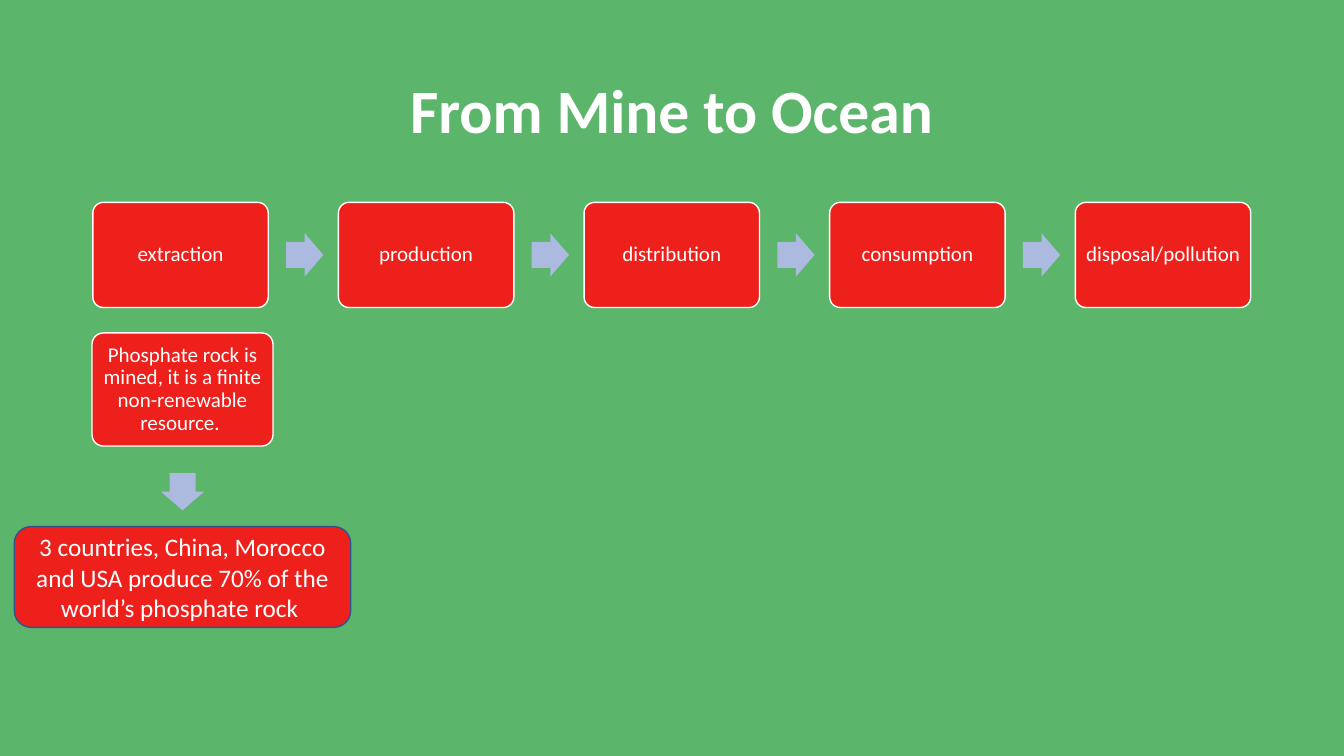
from dataclasses import dataclass

from pptx import Presentation
from pptx.dml.color import RGBColor
from pptx.enum.shapes import MSO_SHAPE
from pptx.enum.text import MSO_ANCHOR, PP_ALIGN
from pptx.util import Cm, Pt

ROUND = MSO_SHAPE.ROUNDED_RECTANGLE
ARROW = MSO_SHAPE.RIGHT_ARROW
MIDDLE = MSO_ANCHOR.MIDDLE
CENTER = PP_ALIGN.CENTER


@dataclass(frozen=True)
class Theme:
    font: str = "Calibri"
    back: str = "5BB56A"
    card: str = "ED201B"
    arrow: str = "ABBADE"
    edge: str = "31538F"
    white: str = "FFFFFF"
    title: int = 44
    step: int = 15
    fact: int = 18


THEME = Theme()
STEPS = ["extraction", "production", "distribution", "consumption",
         "disposal/pollution"]
ROCK = "Phosphate rock is mined, it is a finite non-renewable resource. "
FACT = ("3 countries, China, Morocco and USA produce 70% of the "
        "world’s phosphate rock ")


def color(code):
    return RGBColor.from_string(code)


def write(shape, text, size, pad, space=0.9, bold=False):
    """Put one centred paragraph in the shape; pad is (side, top) in cm."""
    frame = shape.text_frame
    frame.word_wrap = True
    frame.vertical_anchor = MIDDLE
    frame.margin_left = frame.margin_right = Cm(pad[0])
    frame.margin_top = frame.margin_bottom = Cm(pad[1])
    para = frame.paragraphs[0]
    para.alignment = CENTER
    para.line_spacing = space
    run = para.add_run()
    run.text = text
    run.font.name = THEME.font
    run.font.size = Pt(size)
    run.font.bold = bold
    run.font.color.rgb = color(THEME.white)


def add_card(slide, box, edge=THEME.white, curve=0.1):
    card = slide.shapes.add_shape(ROUND, *map(Cm, box))
    card.shadow.inherit = False
    card.adjustments[0] = curve
    card.fill.solid()
    card.fill.fore_color.rgb = color(THEME.card)
    card.line.color.rgb = color(edge)
    card.line.width = Pt(1)
    return card


def add_arrow(slide, mid_x, mid_y, turn=0):
    """Draw a block arrow around its centre point."""
    wide, high = 0.94, 1.09
    arrow = slide.shapes.add_shape(
        ARROW, Cm(mid_x - wide / 2), Cm(mid_y - high / 2), Cm(wide), Cm(high))
    arrow.shadow.inherit = False
    arrow.adjustments[0] = 0.6
    arrow.adjustments[1] = 0.5
    arrow.rotation = turn
    arrow.fill.solid()
    arrow.fill.fore_color.rgb = color(THEME.arrow)
    arrow.line.fill.background()


def add_title(slide, box):
    title = slide.shapes.add_textbox(*map(Cm, box))
    write(title, "From Mine to Ocean", THEME.title, (0.25, 0.13), bold=True)


def add_chain(slide, box):
    """Spread the steps evenly across the box, with arrows between them."""
    left, top, width, height = box
    wide = 4.42
    pitch = (width - wide) / (len(STEPS) - 1)
    for i, step in enumerate(STEPS):
        x = left + i * pitch
        if i:
            add_arrow(slide, x - 0.85, top + height / 2)
        card = add_card(slide, (x, top, wide, height))
        write(card, step, THEME.step, (0.15, 0.15))


def add_detail(slide, box):
    """Stack the rock card, a down arrow and the fact card in the box."""
    left, top, width, height = box
    mid = left + width / 2
    wide, fact_high = 4.56, 2.54
    fact_top = top + height - fact_high
    rock = add_card(slide, (mid - wide / 2, top, wide, 2.85))
    write(rock, ROCK, THEME.step, (0.15, 0.15))
    add_arrow(slide, mid, fact_top - 0.88, turn=90)
    fact = add_card(slide, (left, fact_top, width, fact_high),
                    THEME.edge, 0.167)
    write(fact, FACT, THEME.fact, (0.25, 0.13), space=1.0)


def main():
    deck = Presentation()
    deck.slide_width, deck.slide_height = Cm(33.87), Cm(19.05)
    slide = deck.slides.add_slide(deck.slide_layouts[6])
    slide.background.fill.solid()
    slide.background.fill.fore_color.rgb = color(THEME.back)
    add_title(slide, (2.33, 1.01, 29.21, 3.68))
    add_chain(slide, (2.34, 5.1, 29.18, 2.65))
    add_detail(slide, (0.36, 8.39, 8.48, 7.42))
    deck.save("out.pptx")


if __name__ == "__main__":
    main()
